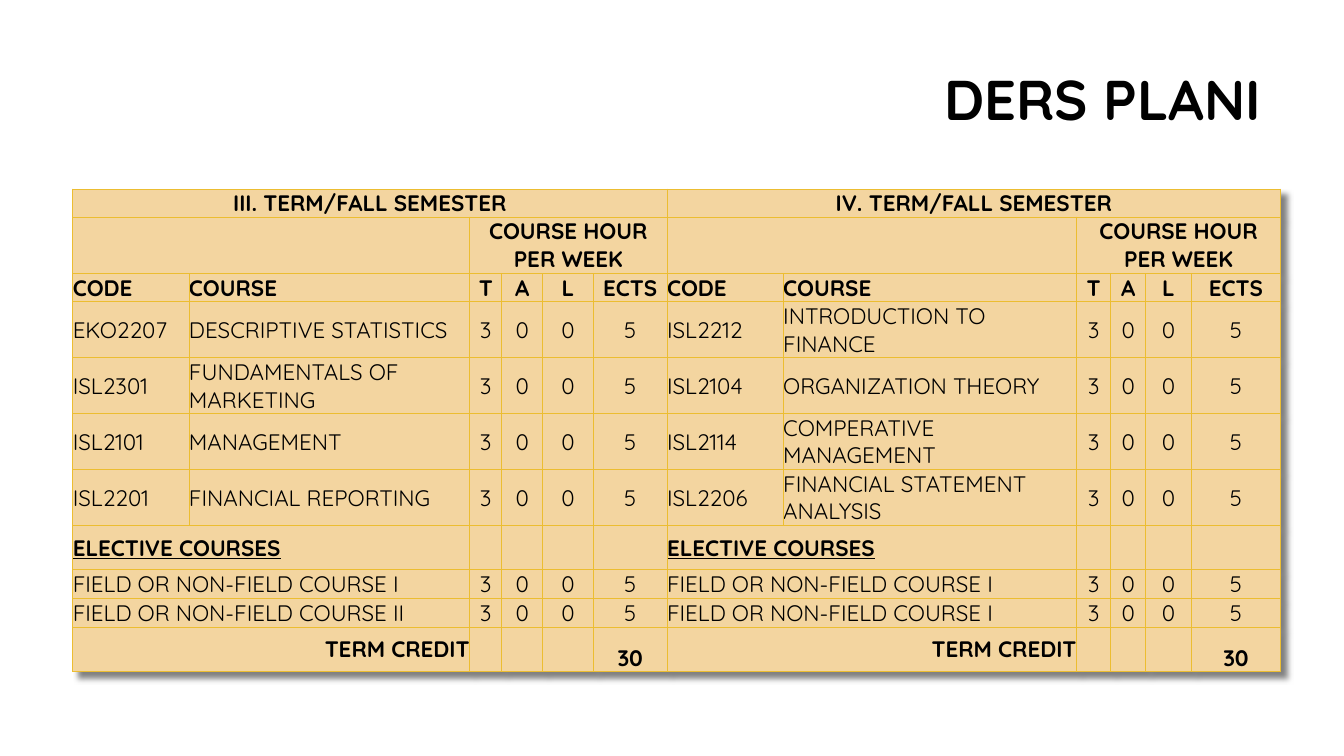
from dataclasses import dataclass

from pptx import Presentation
from pptx.dml.color import RGBColor
from pptx.enum.text import MSO_ANCHOR, MSO_AUTO_SIZE, PP_ALIGN
from pptx.oxml import parse_xml
from pptx.oxml.ns import nsdecls
from pptx.util import Pt


@dataclass(frozen=True)
class Theme:
    font: str = "Quicksand"
    ink: str = "000000"
    fill: str = "F3D5A0"
    border: str = "ECBD31"
    border_width: float = 0.75
    title_size: int = 40
    table_size: int = 16


THEME = Theme()

TITLE_BOX = (230, 41, 678, 65)
TABLE_BOX = (52, 135, 863, 345)
ROW_HEIGHTS = [20, 40.5, 20, 40, 40, 40, 40, 31.5, 20.5, 20.5, 32]
HEADS = ["CODE", "COURSE", "T", "A", "L", "ECTS"]
HOURS = ["3", "0", "0", "5"]

FALL = {
    "title": "III. TERM/FALL SEMESTER",
    "widths": [83, 200.5, 23, 29, 36.5, 52.5],
    "courses": [
        ("EKO2207", "DESCRIPTIVE STATISTICS"),
        ("ISL2301", "FUNDAMENTALS OF MARKETING"),
        ("ISL2101", "MANAGEMENT"),
        ("ISL2201", "FINANCIAL REPORTING"),
    ],
    "electives": ["FIELD OR NON-FIELD COURSE I", "FIELD OR NON-FIELD COURSE II"],
}
SPRING = {
    "title": "IV. TERM/FALL SEMESTER",
    "widths": [83, 209.5, 24.5, 25, 32.5, 64],
    "courses": [
        ("ISL2212", "INTRODUCTION TO FINANCE"),
        ("ISL2104", "ORGANIZATION THEORY"),
        ("ISL2114", "COMPERATIVE MANAGEMENT"),
        ("ISL2206", "FINANCIAL STATEMENT ANALYSIS"),
    ],
    "electives": ["FIELD OR NON-FIELD COURSE I", "FIELD OR NON-FIELD COURSE I"],
}
TERMS = [FALL, SPRING]


def style_font(font, size, **formats):
    values = {"name": THEME.font, "size": Pt(size), **formats}
    for name, value in values.items():
        setattr(font, name, value)
    font.color.rgb = RGBColor.from_string(THEME.ink)


def style_cell(cell):
    """Give a cell its fill, borders and zero margins."""
    for side in ("left", "right", "top", "bottom"):
        setattr(cell, f"margin_{side}", 0)
    cell.vertical_anchor = MSO_ANCHOR.MIDDLE
    cell.fill.solid()
    cell.fill.fore_color.rgb = RGBColor.from_string(THEME.fill)
    tc_pr = cell._tc.get_or_add_tcPr()
    for i, edge in enumerate(("lnL", "lnR", "lnT", "lnB")):
        tc_pr.insert(i, parse_xml(
            f'<a:{edge} {nsdecls("a")} w="{Pt(THEME.border_width)}"><a:solidFill>'
            f'<a:srgbClr val="{THEME.border}"/></a:solidFill></a:{edge}>'))


def add_table_shadow(table):
    table._tbl.tblPr.insert(0, parse_xml(
        f'<a:effectLst {nsdecls("a")}><a:outerShdw blurRad="{Pt(4)}" dist="{Pt(6)}" '
        'dir="2700000" algn="tl" rotWithShape="0"><a:srgbClr val="000000">'
        '<a:alpha val="50000"/></a:srgbClr></a:outerShdw></a:effectLst>'))


def write(cell, text, align=PP_ALIGN.LEFT, **formats):
    p = cell.text_frame.paragraphs[0]
    p.alignment = align
    r = p.add_run()
    r.text = text
    style_font(r.font, THEME.table_size, **formats)


def fill_term(table, left, term):
    """Write one term into the six columns that start at column left."""
    center = PP_ALIGN.CENTER

    def cell(row, col):
        return table.cell(row, left + col)

    def merge(row, first, last):
        cell(row, first).merge(cell(row, last))
        return cell(row, first)

    def write_hours(row):
        for col, value in enumerate(HOURS, 2):
            write(cell(row, col), value, center, bold=False)

    write(merge(0, 0, 5), term["title"], center, bold=True)
    merge(1, 0, 1)
    write(merge(1, 2, 5), "COURSE HOUR PER WEEK", center, bold=True)
    for col, head in enumerate(HEADS):
        write(cell(2, col), head, PP_ALIGN.LEFT if col < 2 else center, bold=True)

    for row, (code, course) in enumerate(term["courses"], 3):
        write(cell(row, 0), code, bold=False)
        write(cell(row, 1), course, bold=False)
        write_hours(row)

    write(merge(7, 0, 1), "ELECTIVE COURSES", bold=True, underline=True)
    for row, elective in enumerate(term["electives"], 8):
        write(merge(row, 0, 1), elective, bold=False)
        write_hours(row)

    write(merge(10, 0, 1), "TERM CREDIT", PP_ALIGN.RIGHT, bold=True)
    write(cell(10, 5), "30", center, bold=True)
    cell(10, 5).vertical_anchor = MSO_ANCHOR.BOTTOM


def add_plan_table(s, box):
    widths = [width for term in TERMS for width in term["widths"]]
    frame = s.shapes.add_table(len(ROW_HEIGHTS), len(widths), *map(Pt, box))
    table = frame.table
    table.first_row = table.horz_banding = False
    add_table_shadow(table)
    for column, width in zip(table.columns, widths):
        column.width = Pt(width)
    for row, height in zip(table.rows, ROW_HEIGHTS):
        row.height = Pt(height)
    for cell in table.iter_cells():
        style_cell(cell)
    for i, term in enumerate(TERMS):
        fill_term(table, i * len(HEADS), term)


def set_title(s, box, text):
    sp = s.shapes.title
    for name, value in zip(("left", "top", "width", "height"), box):
        setattr(sp, name, Pt(value))
    tf = sp.text_frame
    tf.text = text
    tf.word_wrap = True
    tf.auto_size = MSO_AUTO_SIZE.NONE
    tf.vertical_anchor = MSO_ANCHOR.MIDDLE
    p = tf.paragraphs[0]
    p.alignment = PP_ALIGN.RIGHT
    p.line_spacing = 0.9
    style_font(p.runs[0].font, THEME.title_size, bold=True)


def main():
    prs = Presentation()
    prs.slide_width, prs.slide_height = Pt(960), Pt(540)
    s = prs.slides.add_slide(prs.slide_layouts.get_by_name("Title Only"))
    set_title(s, TITLE_BOX, "DERS PLANI")
    add_plan_table(s, TABLE_BOX)
    prs.save("out.pptx")


if __name__ == "__main__":
    main()
